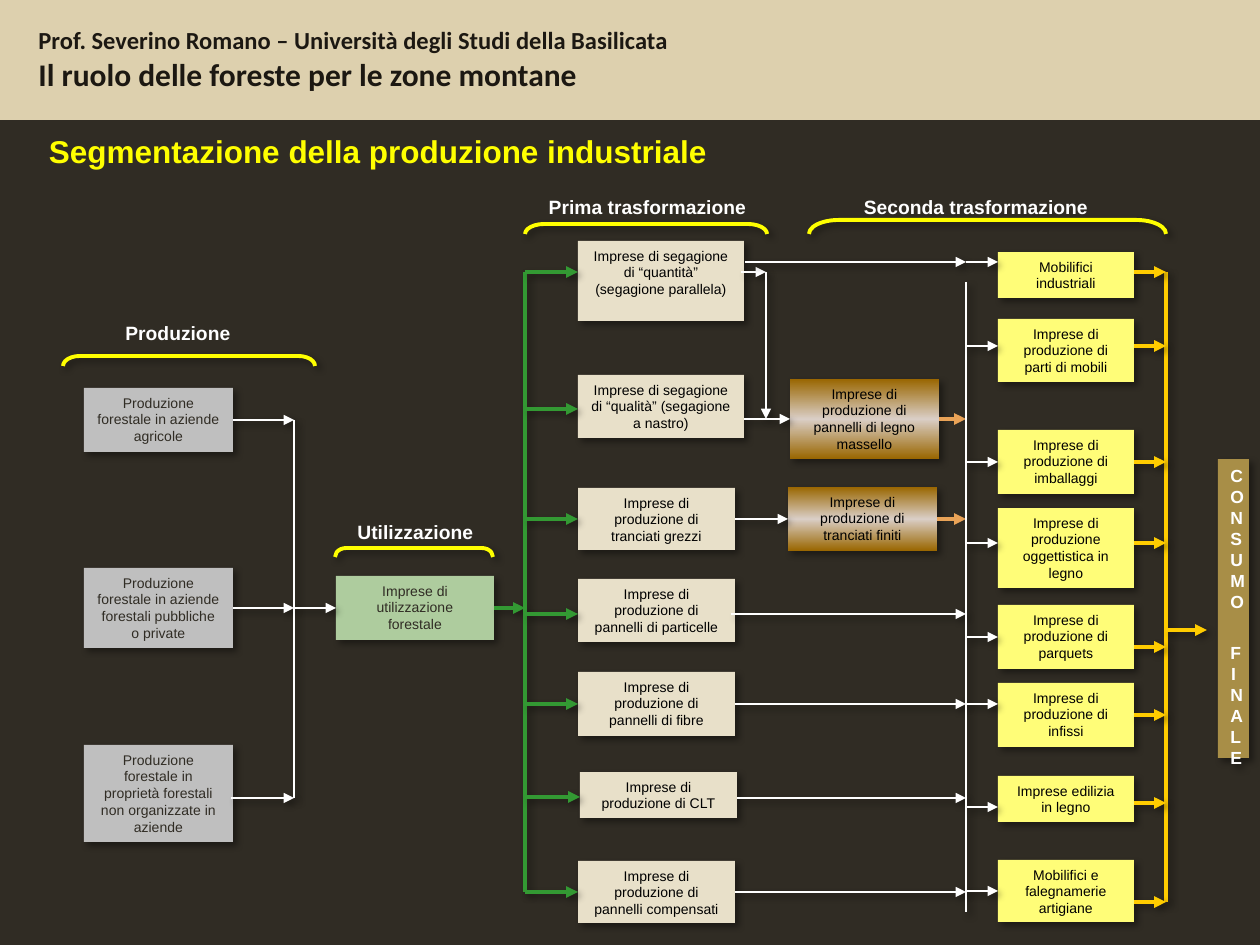
from copy import deepcopy

from lxml.etree import SubElement
from pptx import Presentation
from pptx.dml.color import RGBColor
from pptx.enum.shapes import MSO_CONNECTOR, MSO_SHAPE
from pptx.enum.text import MSO_ANCHOR, PP_ALIGN
from pptx.oxml.ns import qn
from pptx.util import Emu, Pt

DARK = RGBColor(0x30, 0x2C, 0x24)
SAND = RGBColor(0xDD, 0xD0, 0xAE)
INK = RGBColor(0x1C, 0x18, 0x12)
BLACK = RGBColor(0, 0, 0)
WHITE = RGBColor(0xFF, 0xFF, 0xFF)
YELLOW = RGBColor(0xFF, 0xFF, 0)
GREY = RGBColor(0xBF, 0xBF, 0xBF)
SAGE = RGBColor(0xAE, 0xCC, 0x9E)
CREAM = RGBColor(0xE8, 0xE0, 0xC9)
LEMON = RGBColor(0xFF, 0xFD, 0x78)
OLIVE = RGBColor(0xA8, 0x8E, 0x47)
BROWN = RGBColor(0x99, 0x66, 0)
PALE = RGBColor(0xDA, 0xCE, 0xC6)
GREEN = RGBColor(0x33, 0x99, 0x33)
ORANGE = RGBColor(0xE9, 0xA3, 0x57)
GOLD = RGBColor(0xFF, 0xCC, 0)


def px(n):
    return Emu(round(n * 914400 / 126))


def add_shadow(effects):
    shadow = SubElement(effects, qn("a:outerShdw"), blurRad=str(Pt(4)), dist=str(Pt(3)),
                        dir="2700000", algn="ctr", rotWithShape="0")
    color = SubElement(shadow, qn("a:srgbClr"), val="000000")
    SubElement(color, qn("a:alpha"), val="40000")


class Diagram:
    font = "Arial"

    def __init__(self, slide):
        self.slide = slide
        self.boxes = []

    def set_text(self, sp, lines, size, color, bold=False, align=PP_ALIGN.CENTER, font=font):
        """Fill the shape; size is one value or one per paragraph."""
        tf = sp.text_frame
        tf.word_wrap = True
        tf.vertical_anchor = MSO_ANCHOR.TOP
        sizes = size if isinstance(size, tuple) else (size,) * len(lines)
        for i, (line, points) in enumerate(zip(lines, sizes)):
            p = tf.add_paragraph() if i else tf.paragraphs[0]
            p.text = line
            p.alignment = align
            p.font.name, p.font.size, p.font.bold = font, Pt(points), bold
            p.font.color.rgb = color

    def title(self, text, *frame):
        sp = self.slide.shapes.title
        sp.left, sp.top, sp.width, sp.height = map(px, frame)
        self.set_text(sp, [text], 18, YELLOW, bold=True)

    def label(self, lines, *frame, size=11, color=WHITE, **style):
        sp = self.slide.shapes.add_textbox(*map(px, frame))
        self.set_text(sp, lines, size, color, bold=True, **style)

    def shape(self, kind, frame, shadow=True):
        sp = self.slide.shapes.add_shape(kind, *map(px, frame))
        sp.shadow.inherit = False
        if shadow:
            add_shadow(sp._element.spPr.find(qn("a:effectLst")))
        return sp

    def rect(self, frame, fill, shadow=True):
        sp = self.shape(MSO_SHAPE.RECTANGLE, frame, shadow)
        sp.line.fill.background()
        sp.fill.solid()
        sp.fill.fore_color.rgb = fill
        return sp

    def box(self, text, frame, fill, color=BLACK):
        sp = self.rect(frame, fill)
        self.set_text(sp, [text], 8, color)
        self.boxes.append((sp, frame))
        return sp

    def gradient_box(self, text, frame):
        sp = self.box(text, frame, BROWN)
        sp.fill.gradient()
        sp.fill.gradient_angle = 90
        stop_list = sp._element.spPr.find(".//" + qn("a:gsLst"))
        stop_list.insert(1, deepcopy(stop_list[0]))
        for stop, color, position in zip(sp.fill.gradient_stops, (BROWN, PALE, BROWN), (0, 0.5, 1)):
            stop.color.rgb, stop.position = color, position

    def bracket(self, x, y, w, h, curve):
        """Bracket opening downwards; the frame is the one seen after rotation."""
        sp = self.shape(MSO_SHAPE.LEFT_BRACKET, (x + (w - h) / 2, y + (h - w) / 2, h, w))
        sp.rotation = 90
        sp.adjustments[0] = curve
        sp.fill.background()
        sp.line.color.rgb, sp.line.width = YELLOW, Pt(2.25)

    def join(self, connect, x, y):
        """Attach a connector end lying at the middle of a box's left or right side."""
        for sp, (left, top, w, h) in self.boxes:
            for site, side in ((1, left), (3, left + w)):
                if abs(x - side) <= 3 and y == top + h / 2:
                    connect(sp, site)

    def line(self, x1, y1, x2, y2, color=WHITE, head=True, shadow=True):
        cx = self.slide.shapes.add_connector(MSO_CONNECTOR.STRAIGHT, *map(px, (x1, y1, x2, y2)))
        cx.line.color.rgb = color
        cx.line.width = Pt(1.5 if color == WHITE else 2.25)
        if head:
            SubElement(cx.line._get_or_add_ln(), qn("a:tailEnd"), type="triangle")
            self.join(cx.begin_connect, x1, y1)
            self.join(cx.end_connect, x2, y2)
        effects = SubElement(cx._element.spPr, qn("a:effectLst"))
        if shadow:
            add_shadow(effects)


def main():
    prs = Presentation()
    prs.slide_width, prs.slide_height = px(1260), px(945)
    s = prs.slides.add_slide(prs.slide_layouts[5])
    s.background.fill.solid()
    s.background.fill.fore_color.rgb = DARK
    d = Diagram(s)

    d.rect((0, 0, 1260, 120), SAND, shadow=False)
    d.label(["Prof. Severino Romano – Università degli Studi della Basilicata",
             "Il ruolo delle foreste per le zone montane"],
            26, 19, 839, 81, size=(14, 18), color=INK, align=PP_ALIGN.LEFT, font="Calibri")
    d.title("Segmentazione della produzione industriale", 21, 126, 714, 42)

    d.label(["Produzione"], 113, 315, 139, 37, align=PP_ALIGN.LEFT)
    d.label(["Utilizzazione"], 345, 514, 147, 29, align=PP_ALIGN.LEFT)
    d.label(["Prima trasformazione"], 517, 189, 261, 37)
    d.label(["Seconda trasformazione"], 787, 189, 378, 37)
    d.bracket(63, 356, 252, 10, 1.67)
    d.bracket(335, 548, 158, 9, 1.25)
    d.bracket(525, 224, 242, 10, 1.92)
    d.bracket(809, 220, 357, 14, 2.12)

    # Text, top, height, y of the outgoing arrow
    production = [
        ("Produzione forestale in aziende agricole", 388, 64, 420),
        ("Produzione forestale in aziende forestali pubbliche o private", 568, 80, 608),
        ("Produzione forestale in proprietà forestali non organizzate in aziende", 745, 97, 798),
    ]
    for text, top, h, y in production:
        d.box(text, (84, top, 149, h), GREY, DARK)
        d.line(231, y, 294, y)
    d.line(294, 420, 294, 798, head=False)
    d.box("Imprese di utilizzazione forestale", (336, 576, 158, 64), SAGE, DARK)
    d.line(294, 608, 336, 608)
    d.line(494, 608, 525, 608, GREEN)

    # Text, left, top, width, height, y of the incoming arrow
    first_stage = [
        ("Imprese di segagione di “quantità” (segagione parallela)", 578, 241, 166, 80, 272),
        ("Imprese di segagione di “qualità” (segagione a nastro)", 578, 375, 166, 63, 409),
        ("Imprese di produzione di tranciati grezzi", 578, 488, 157, 62, 519),
        ("Imprese di produzione di pannelli di particelle", 578, 579, 157, 63, 614),
        ("Imprese di produzione di pannelli di fibre", 578, 672, 157, 64, 704),
        ("Imprese di produzione di CLT", 580, 772, 157, 46, 797),
        ("Imprese di produzione di pannelli compensati", 578, 861, 157, 62, 892),
    ]
    d.line(525, 272, 525, 892, GREEN, head=False)
    for text, left, top, w, h, y in first_stage:
        d.box(text, (left, top, w, h), CREAM)
        d.line(525, y, left, y, GREEN)

    d.gradient_box("Imprese di produzione di pannelli di legno massello", (790, 379, 149, 80))
    d.gradient_box("Imprese di produzione di tranciati finiti", (788, 487, 149, 64))
    d.line(741, 272, 766, 272)
    d.line(766, 272, 766, 419)
    d.line(744, 419, 788, 419)
    d.line(735, 519, 788, 519)
    for x, y in ((937, 419), (936, 519)):
        d.line(x, y, 966, y, ORANGE, shadow=False)
    for x, y in ((745, 262), (731, 614), (733, 704), (737, 798), (735, 892)):
        d.line(x, y, 966, y)

    # Text, top, height, y of the incoming arrow, y of the outgoing arrow
    second_stage = [
        ("Mobilifici industriali", 252, 46, 262, 272),
        ("Imprese di produzione di parti di mobili", 319, 63, 346, 346),
        ("Imprese di produzione di imballaggi", 430, 64, 462, 462),
        ("Imprese di produzione oggettistica in legno", 508, 80, 543, 543),
        ("Imprese di produzione di parquets", 605, 64, 637, 647),
        ("Imprese di produzione di infissi", 683, 64, 704, 715),
        ("Imprese edilizia in legno", 776, 46, 807, 803),
        ("Mobilifici e falegnamerie artigiane", 860, 62, 891, 902),
    ]
    d.line(966, 282, 966, 912, head=False)
    d.line(1166, 272, 1166, 902, GOLD, head=False)
    for text, top, h, y_in, y_out in second_stage:
        d.box(text, (998, top, 136, h), LEMON)
        d.line(966, y_in, 998, y_in)
        d.line(1134, y_out, 1166, y_out, GOLD)

    d.line(1166, 630, 1207, 630, GOLD)
    consumption = d.rect((1218, 459, 31, 299), OLIVE)
    d.set_text(consumption, ["CONSUMO ", "FINALE"], 10, WHITE, bold=True)
    consumption.text_frame.paragraphs[1].space_before = Pt(5)

    prs.save("out.pptx")


if __name__ == "__main__":
    main()
